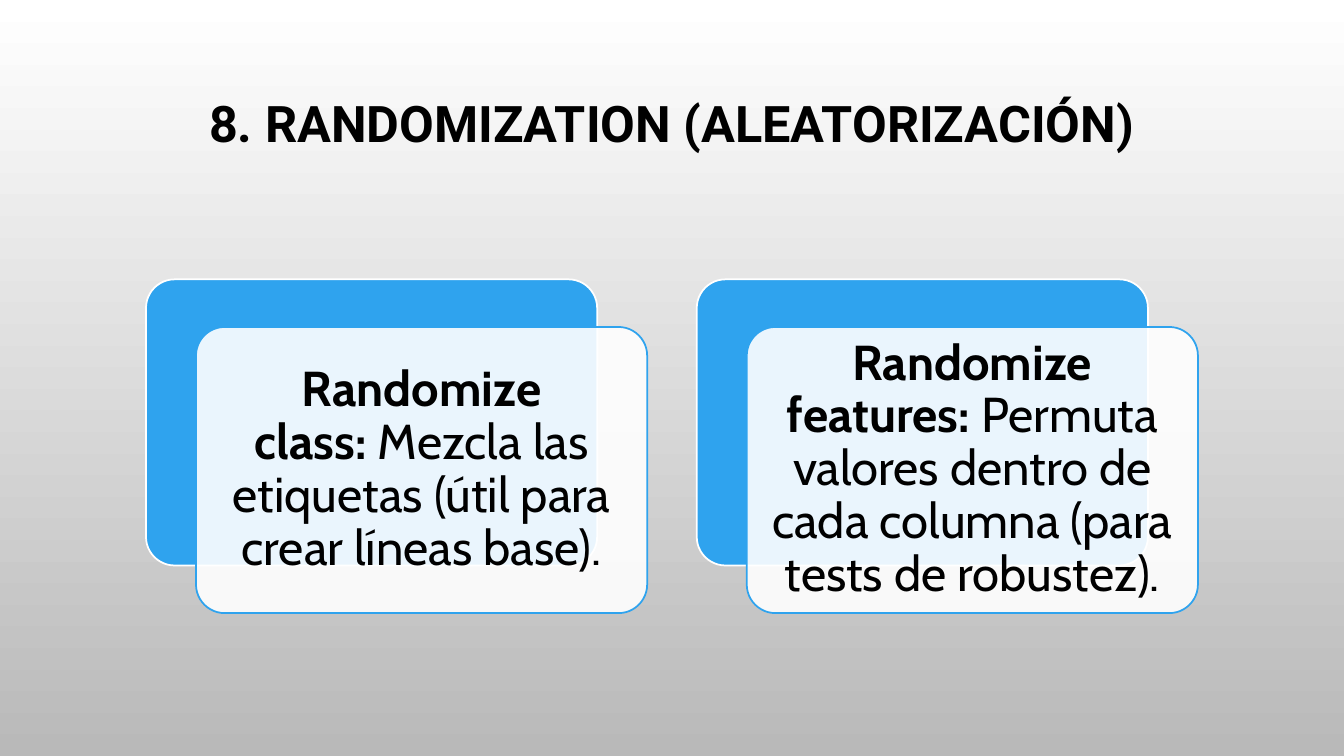
from dataclasses import dataclass

from lxml import etree
from pptx import Presentation
from pptx.dml.color import RGBColor
from pptx.enum.shapes import MSO_SHAPE
from pptx.enum.text import MSO_ANCHOR, PP_ALIGN
from pptx.oxml.ns import qn
from pptx.util import Cm, Pt

ROUNDED = MSO_SHAPE.ROUNDED_RECTANGLE
MIDDLE = MSO_ANCHOR.MIDDLE
CENTER = PP_ALIGN.CENTER
NO_BREAK_SPACE = chr(160)

TITLE = "8. RANDOMIZATION (ALEATORIZACIÓN)"
CARDS = [
    ("Randomize class:", "Mezcla las etiquetas (útil para crear líneas base)."),
    ("Randomize features:", "Permuta valores dentro de cada columna (para tests de robustez)."),
]


@dataclass(frozen=True)
class Theme:
    white: RGBColor = RGBColor(0xFF, 0xFF, 0xFF)
    gray: RGBColor = RGBColor(0xB9, 0xB9, 0xB9)
    blue: RGBColor = RGBColor(0x2F, 0xA3, 0xEE)
    black: RGBColor = RGBColor(0, 0, 0)
    title_font: str = "Roboto"
    card_font: str = "Cabin"
    title_size: int = 36
    card_size: int = 35
    line_width: float = 1.25
    line_spacing: float = 0.9
    front_opacity: int = 90


THEME = Theme()

# Lengths in centimetres
SLIDE_WIDTH, SLIDE_HEIGHT = 33.87, 19.05
TITLE_BOX = (2.54, 1.73, 28.78, 4.45)
TITLE_BOTTOM_INSET = 1.67
CARD_LEFT, CARD_TOP = 3.68, 7.04
CARD_WIDTH, CARD_HEIGHT = 11.37, 7.21
CARD_STEP = 13.88
FRONT_SHIFT_X, FRONT_SHIFT_Y = 1.26, 1.2
CARD_INSET = 0.38


def paint_background(slide):
    fill = slide.background.fill
    fill.gradient()
    fill.gradient_angle = 270
    for stop, color, position in zip(fill.gradient_stops, (THEME.white, THEME.gray), (0, 1)):
        stop.color.rgb = color
        stop.position = position


def write_centered(shape, parts, font_name, size):
    """Fill the shape with one centred paragraph made of (text, bold) parts."""
    frame = shape.text_frame
    frame.word_wrap = True
    frame.vertical_anchor = MIDDLE
    paragraph = frame.paragraphs[0]
    paragraph.alignment = CENTER
    paragraph.line_spacing = THEME.line_spacing
    for text, bold in parts:
        run = paragraph.add_run()
        run.text = text
        run.font.name = font_name
        run.font.size = Pt(size)
        run.font.bold = bold
        run.font.color.rgb = THEME.black


def add_panel(slide, left, top, fill_color, line_color):
    panel = slide.shapes.add_shape(ROUNDED, Cm(left), Cm(top), Cm(CARD_WIDTH), Cm(CARD_HEIGHT))
    panel.shadow.inherit = False
    panel.adjustments[0] = 0.1
    panel.fill.solid()
    panel.fill.fore_color.rgb = fill_color
    panel.line.color.rgb = line_color
    panel.line.width = Pt(THEME.line_width)
    return panel


def set_opacity(shape, percent):
    color = shape.fill._xPr.find(qn("a:solidFill"))[0]
    etree.SubElement(color, qn("a:alpha")).set("val", str(percent * 1000))


def add_card(slide, left, heading, description):
    add_panel(slide, left, CARD_TOP, THEME.blue, THEME.white)
    front = add_panel(slide, left + FRONT_SHIFT_X, CARD_TOP + FRONT_SHIFT_Y, THEME.white, THEME.blue)
    set_opacity(front, THEME.front_opacity)
    frame = front.text_frame
    frame.margin_left = frame.margin_right = Cm(CARD_INSET)
    frame.margin_top = frame.margin_bottom = Cm(CARD_INSET)
    parts = [(heading, True), (NO_BREAK_SPACE + description, False)]
    write_centered(front, parts, THEME.card_font, THEME.card_size)


def main():
    presentation = Presentation()
    presentation.slide_width = Cm(SLIDE_WIDTH)
    presentation.slide_height = Cm(SLIDE_HEIGHT)
    slide = presentation.slides.add_slide(presentation.slide_layouts[6])
    paint_background(slide)

    title = slide.shapes.add_textbox(*map(Cm, TITLE_BOX))
    title.text_frame.margin_bottom = Cm(TITLE_BOTTOM_INSET)
    write_centered(title, [(TITLE, True)], THEME.title_font, THEME.title_size)

    for index, (heading, description) in enumerate(CARDS):
        add_card(slide, CARD_LEFT + index * CARD_STEP, heading, description)

    presentation.save("out.pptx")


if __name__ == "__main__":
    main()
